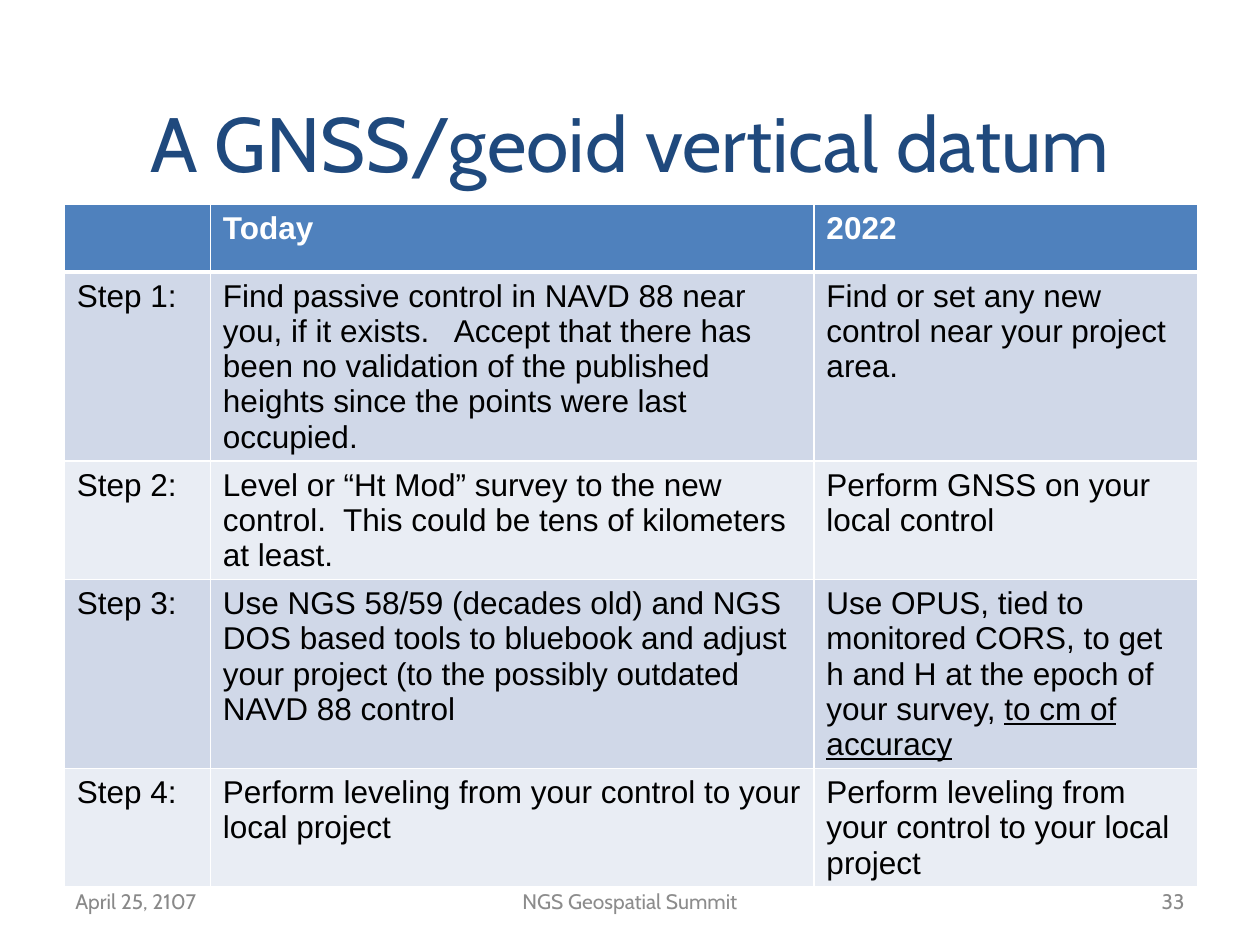
import pptx
import pptx.dml.color
import pptx.enum.text
import pptx.oxml
import pptx.oxml.ns
import pptx.util
from dataclasses import dataclass

Inches, Pt = pptx.util.Inches, pptx.util.Pt
RGB = pptx.dml.color.RGBColor.from_string
ALIGN = pptx.enum.text.PP_ALIGN
MIDDLE = pptx.enum.text.MSO_ANCHOR.MIDDLE


@dataclass(frozen=True)
class Theme:
    heading_font: str = "Cabin"
    body_font: str = "Arial"
    title_size: int = 44
    body_size: int = 18
    footer_size: int = 12
    title: str = "1F497D"
    text: str = "000000"
    white: str = "FFFFFF"
    header: str = "4F81BD"
    bands: tuple = ("D0D8E8", "E9EDF4")
    footer: str = "898989"
    footer_mid: str = "8C8C8C"


T = Theme()
WIDTH, HEIGHT = 10, 7.5
MARGIN = 0.05 * WIDTH
CONTENT = WIDTH - 2 * MARGIN

COLUMNS = (1.16, 4.79, 3.05)
ROW_HEIGHTS = (0.54, 1.32, 0.71, 0.54, 0.54)
LEVELING = "Perform leveling from your control to your local project"
# Each cell is a list of runs; a run starting with "_" is underlined
ROWS = (
    ([], ["Today"], ["2022"]),
    (["Step 1:"],
     ["Find passive control in NAVD 88 near you, if it exists.   Accept that there has "
      "been no validation of the published heights since the points were last occupied."],
     ["Find or set any new control near your project area."]),
    (["Step 2:"],
     ["Level or “Ht Mod” survey to the new control.  This could be tens of kilometers "
      "at least."],
     ["Perform GNSS on your local control"]),
    (["Step 3:"],
     ["Use NGS 58/59 (decades old) and NGS DOS based tools to bluebook and adjust your "
      "project (to the possibly outdated NAVD 88 control"],
     ["Use OPUS, tied to monitored CORS, to get h and H at the epoch of your survey, ",
      "_to cm of accuracy"]),
    (["Step 4:"], [LEVELING], [LEVELING]),
)


def style(font, name, size, color, bold=False):
    font.name, font.size, font.bold = name, Pt(size), bold
    font.color.rgb = RGB(color)


def place(sp, box):
    sp.left, sp.top, sp.width, sp.height = (Inches(v) for v in box)


def add_title(s, box, text):
    sp = s.shapes.title
    place(sp, box)
    tf = sp.text_frame
    tf.text, tf.vertical_anchor = text, MIDDLE
    p = tf.paragraphs[0]
    p.alignment = ALIGN.CENTER
    style(p.runs[0].font, T.heading_font, T.title_size, T.title)


def set_borders(cell, bottom):
    pr = cell._tc.get_or_add_tcPr()
    widths = {"lnL": 1, "lnR": 1, "lnT": 1, "lnB": bottom}
    for i, (tag, width) in enumerate(widths.items()):
        pr.insert(i, pptx.oxml.parse_xml(
            f'<a:{tag} {pptx.oxml.ns.nsdecls("a")} w="{Pt(width)}"><a:solidFill>'
            f'<a:srgbClr val="{T.white}"/></a:solidFill></a:{tag}>'))


def fill_cell(cell, runs, is_header, fill):
    cell.fill.solid()
    cell.fill.fore_color.rgb = RGB(fill)
    set_borders(cell, 3 if is_header else 1)
    p = cell.text_frame.paragraphs[0]
    style(p.font, T.body_font, T.body_size, T.white if is_header else T.text, is_header)
    for text in runs:
        r = p.add_run()
        r.text = text.removeprefix("_")
        style(r.font, T.body_font, T.body_size,
              T.white if is_header else T.text, is_header)
        if text.startswith("_"):
            r.font.underline = True


def add_steps_table(s, box):
    table = s.shapes.add_table(len(ROWS), len(COLUMNS),
                               *(Inches(v) for v in box)).table
    for column, width in zip(table.columns, COLUMNS):
        column.width = Inches(width)
    for i, (row, height, cells) in enumerate(zip(table.rows, ROW_HEIGHTS, ROWS)):
        row.height = Inches(height)
        fill = T.header if i == 0 else T.bands[(i - 1) % 2]
        for cell, runs in zip(row.cells, cells):
            fill_cell(cell, runs, i == 0, fill)


def add_footer(s, box):
    left, top, width, height = box
    side, middle = 2.33, 3.17
    parts = (
        ("April 25, 2107", left, side, ALIGN.LEFT, T.footer),
        ("NGS Geospatial Summit", left + (width - middle) / 2, middle,
         ALIGN.CENTER, T.footer_mid),
        ("33", left + width - side, side, ALIGN.RIGHT, T.footer),
    )
    for text, x, w, align, color in parts:
        tf = s.shapes.add_textbox(*(Inches(v) for v in (x, top, w, height))).text_frame
        tf.word_wrap, tf.vertical_anchor, tf.text = True, MIDDLE, text
        p = tf.paragraphs[0]
        p.alignment = align
        style(p.runs[0].font, T.heading_font, T.footer_size, color)


def main():
    prs = pptx.Presentation()
    prs.slide_width, prs.slide_height = Inches(WIDTH), Inches(HEIGHT)
    s = prs.slides.add_slide(prs.slide_layouts[5])
    add_title(s, (MARGIN, MARGIN, CONTENT, HEIGHT / 6), "A GNSS/geoid vertical datum")
    add_steps_table(s, (MARGIN + 0.01, 1.62, CONTENT, sum(ROW_HEIGHTS)))
    add_footer(s, (MARGIN, 6.95, CONTENT, 0.4))
    prs.save("out.pptx")


if __name__ == "__main__":
    main()
